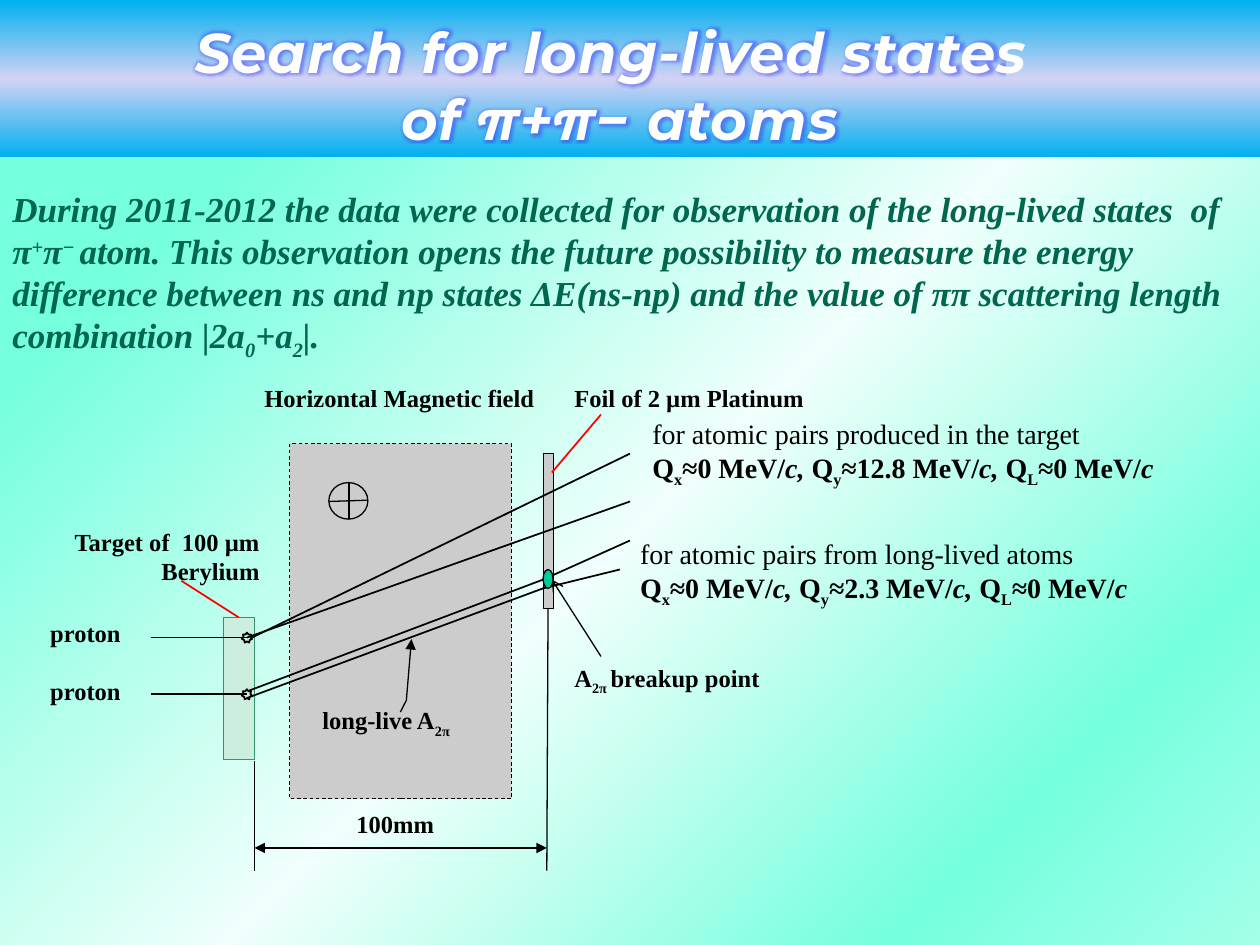
import copy

import pptx
import pptx.dml.color
import pptx.enum.dml
import pptx.enum.shapes
import pptx.enum.text
import pptx.oxml
import pptx.oxml.ns
import pptx.util
from pptx.util import Inches

RGBColor = pptx.dml.color.RGBColor
SHAPE = pptx.enum.shapes.MSO_SHAPE
ALIGN = pptx.enum.text.PP_ALIGN

BLACK = RGBColor(0x00, 0x00, 0x00)
WHITE = RGBColor(0xFE, 0xFE, 0xFE)
RED = RGBColor(0xFF, 0x00, 0x00)
SKY = RGBColor(0x00, 0xB0, 0xF0)
LAVENDER = RGBColor(0xD2, 0xD2, 0xF4)
AQUA = RGBColor(0x75, 0xFF, 0xDD)
MIST = RGBColor(0xF0, 0xFF, 0xFB)
PALE_AQUA = RGBColor(0xA3, 0xFF, 0xE8)
DARK_GREEN = RGBColor(0x00, 0x66, 0x4D)
TARGET_FILL = RGBColor(0xCC, 0xEE, 0xDF)
TARGET_LINE = RGBColor(0x32, 0x94, 0x6A)
GREY = RGBColor(0xCC, 0xCC, 0xCC)
TEAL = RGBColor(0x00, 0xCC, 0x99)

NAMESPACE = pptx.oxml.ns.nsdecls("a")
TITLE_OUTLINE = f'<a:ln {NAMESPACE} w="12700"><a:solidFill><a:srgbClr val="1C1CB5"/></a:solidFill></a:ln>'
TITLE_GLOW = (f'<a:effectLst {NAMESPACE}><a:glow rad="50800"><a:srgbClr val="3C3CF0">'
              '<a:alpha val="50000"/></a:srgbClr></a:glow></a:effectLst>')
BASELINES = {"super": "30000", "sub": "-25000"}


class Drawing:
    font = "Times New Roman"

    def __init__(self, page):
        self.page = page

    def gradient(self, fill, stops, angle):
        fill.gradient()
        fill.gradient_angle = angle
        first = fill.gradient_stops[0]._gs
        for _ in stops[2:]:
            first.addnext(copy.deepcopy(first))
        for stop, (position, color) in zip(fill.gradient_stops, stops):
            stop.position = position
            stop.color.rgb = color

    def shape(self, kind, place, fill=None, line=BLACK, width=0.75):
        shape = self.page.shapes.add_shape(kind, *map(Inches, place))
        shape.shadow.inherit = False
        if fill is None:
            shape.fill.background()
        else:
            shape.fill.solid()
            shape.fill.fore_color.rgb = fill
        if line is None:
            shape.line.fill.background()
        else:
            shape.line.color.rgb = line
            shape.line.width = pptx.util.Pt(width)
        return shape

    def arrowheads(self, shape, **ends):
        outline = shape.line._get_or_add_ln()
        for end, kind in ends.items():
            outline.append(pptx.oxml.parse_xml(f'<a:{end} {NAMESPACE} type="{kind}"/>'))

    def line(self, start, end, color=BLACK, width=1):
        line = self.page.shapes.add_connector(
            pptx.enum.shapes.MSO_CONNECTOR.STRAIGHT, *map(Inches, start + end))
        line.line.color.rgb = color
        line.line.width = pptx.util.Pt(width)
        line._element.spPr.append(pptx.oxml.parse_xml(f"<a:effectLst {NAMESPACE}/>"))
        return line

    def text(self, place, paragraphs, size=14, color=BLACK, bold=True, italic=False,
             align=ALIGN.LEFT, font=None):
        box = self.page.shapes.add_textbox(*map(Inches, place))
        frame = box.text_frame
        frame.word_wrap = True
        frame.auto_size = pptx.enum.text.MSO_AUTO_SIZE.SHAPE_TO_FIT_TEXT
        for index, spans in enumerate(paragraphs):
            para = frame.paragraphs[0] if index == 0 else frame.add_paragraph()
            para.alignment = align
            para.font.name = font or self.font
            para.font.size = pptx.util.Pt(size)
            para.font.color.rgb = color
            para.font.italic = italic
            if bold is not None:
                para.font.bold = bold
            for words, style in spans:
                span = para.add_run()
                span.text = words
                if style in BASELINES:
                    span._r.get_or_add_rPr().set("baseline", BASELINES[style])
                elif style == "italic":
                    span.font.italic = True
        return box

    def title(self, place, lines):
        box = self.text(place, [[(words, "")] for words in lines], 32, WHITE,
                        italic=True, align=ALIGN.CENTER, font="Montserrat")
        for para in box.text_frame.paragraphs:
            span = para.runs[0]
            span.font.color.rgb = WHITE
            properties = span._r.get_or_add_rPr()
            properties.set("spc", "50")
            properties.insert(0, pptx.oxml.parse_xml(TITLE_OUTLINE))
            properties.append(pptx.oxml.parse_xml(TITLE_GLOW))

    def momentum(self, place, heading, q_y):
        box = self.text(place, [[(heading, "")], []], 16, bold=False)
        para = box.text_frame.paragraphs[1]
        para.font.bold = True
        for axis, value, unit in (("x", "0", "c, "), ("y", q_y, "c, "), ("L", "0", "c")):
            for words, style in (("Q", ""), (axis, "sub"), (f"≈{value} MeV/", ""), (unit, "italic")):
                span = para.add_run()
                span.text = words
                if style == "sub":
                    span._r.get_or_add_rPr().set("baseline", BASELINES[style])
                elif style:
                    span.font.italic = True
        return box


def main():
    deck = pptx.Presentation()
    deck.slide_width, deck.slide_height = Inches(10), Inches(7.5)
    page = deck.slides.add_slide(deck.slide_layouts[6])
    drawing = Drawing(page)
    drawing.gradient(page.background.fill,
                     [(0.18, AQUA), (0.53, MIST), (0.83, AQUA), (1, PALE_AQUA)], 315)

    banner = drawing.shape(SHAPE.RECTANGLE, (0, 0, 10, 1.25), line=None)
    drawing.gradient(banner.fill, [(0, SKY), (0.5, LAVENDER), (1, SKY)], 270)
    drawing.title((-0.08, 0.09, 10, 1.18), ["Search for long-lived states ", "of π+π− atoms"])
    drawing.text((0, 1.44, 10, 1.45), [[
        ("During 2011-2012 the data were collected for observation of the long-lived states  of π", ""),
        ("+", "super"), ("π", ""), ("− ", "super"),
        ("atom. This observation opens the future possibility to measure the energy difference "
         "between ns and np states ΔE(ns-np) and the value of ππ scattering length combination |2a", ""),
        ("0", "sub"), ("+a", ""), ("2", "sub"), ("|.", "")]], 20, DARK_GREEN, italic=True)
    drawing.momentum((5.08, 3.26, 4.54, 0.64), "for atomic pairs produced in the target", "12.8")
    long_lived = drawing.momentum((5.08, 4.21, 4.92, 0.64), "for atomic pairs from long-lived atoms", "2.3")
    long_lived.text_frame.margin_left = long_lived.text_frame.margin_right = 0

    target = drawing.shape(SHAPE.RECTANGLE, (1.77, 4.9, 0.25, 1.13), TARGET_FILL, TARGET_LINE, 0.5)
    magnet = drawing.shape(SHAPE.RECTANGLE, (2.3, 3.52, 1.76, 2.82), GREY, width=0.5)
    magnet.line.dash_style = pptx.enum.dml.MSO_LINE.DASH
    foil = drawing.shape(SHAPE.RECTANGLE, (4.31, 3.6, 0.08, 1.23), GREY, width=0.5)

    for beam, label_top in ((5.06, 4.86), (5.51, 5.32)):
        drawing.line((1.2, beam), (1.96, beam))
        drawing.shape(SHAPE.STAR_7_POINT, (1.92, beam - 0.04, 0.08, 0.08), width=1)
        drawing.text((0.3, label_top, 1.28, 0.34), [[("proton", "")]])

    for start, end in (
        ((2, 5.06), (5, 3.6)),
        ((1.96, 5.06), (5, 3.98)),
        ((1.98, 5.48), (4.31, 4.6)),
        ((4.31, 4.6), (5, 4.29)),
        ((1.96, 5.54), (4.31, 4.67)),
        ((4.31, 4.67), (4.92, 4.52)),
    ):
        drawing.line(start, end)

    drawing.line((2.02, 6.04), (2.02, 6.91), width=0.75)
    foil_edge = drawing.line((4.35, 4.83), (4.34, 6.91), width=0.75)
    foil_edge.begin_connect(foil, 2)
    distance = drawing.line((4.34, 6.73), (2.02, 6.73), width=0.75)
    drawing.arrowheads(distance, headEnd="triangle", tailEnd="triangle")

    for place, words in (
        ((2, 2.99, 2.39, 0.34), "Horizontal Magnetic field"),
        ((4.46, 2.99, 2.28, 0.34), "Foil of 2 µm Platinum"),
        ((2.73, 6.37, 1.18, 0.4), "100mm"),
    ):
        drawing.text(place, [[(words, "")]])
    drawing.text((0.46, 4.13, 1.7, 0.57), [[("Target of  100 µm Berylium", "")]], align=ALIGN.RIGHT)
    drawing.text((2.46, 5.55, 1.72, 0.34), [[("long-live A", ""), ("2π", "sub")]])
    drawing.text((4.46, 5.21, 1.76, 0.34), [[("A", ""), ("2π ", "sub"), ("breakup point", "")]])

    callout = drawing.shape(SHAPE.LINE_CALLOUT_2_NO_BORDER, (2.73, 5.61, 0.8, 0.25))
    for index, value in enumerate((0.17, 0.56, -0.21, 0.62, -2.15, 0.67)):
        callout.adjustments[index] = value
    drawing.arrowheads(callout, tailEnd="triangle")
    breakup = drawing.line((4.77, 5.21), (4.38, 4.6), width=0.75)
    drawing.arrowheads(breakup, tailEnd="arrow")
    drawing.shape(SHAPE.OVAL, (4.31, 4.52, 0.08, 0.15), TEAL)

    drawing.shape(SHAPE.OVAL, (2.61, 3.83, 0.31, 0.29))
    drawing.line((2.77, 3.83), (2.77, 4.12), width=0.75)
    drawing.line((2.61, 3.98), (2.92, 3.97), width=0.75)
    drawing.line((4.77, 3.29), (4.38, 3.75), RED)
    target_leader = drawing.line((1.44, 4.61), (1.89, 4.9), RED)
    target_leader.end_connect(target, 0)

    deck.save("out.pptx")


if __name__ == "__main__":
    main()
